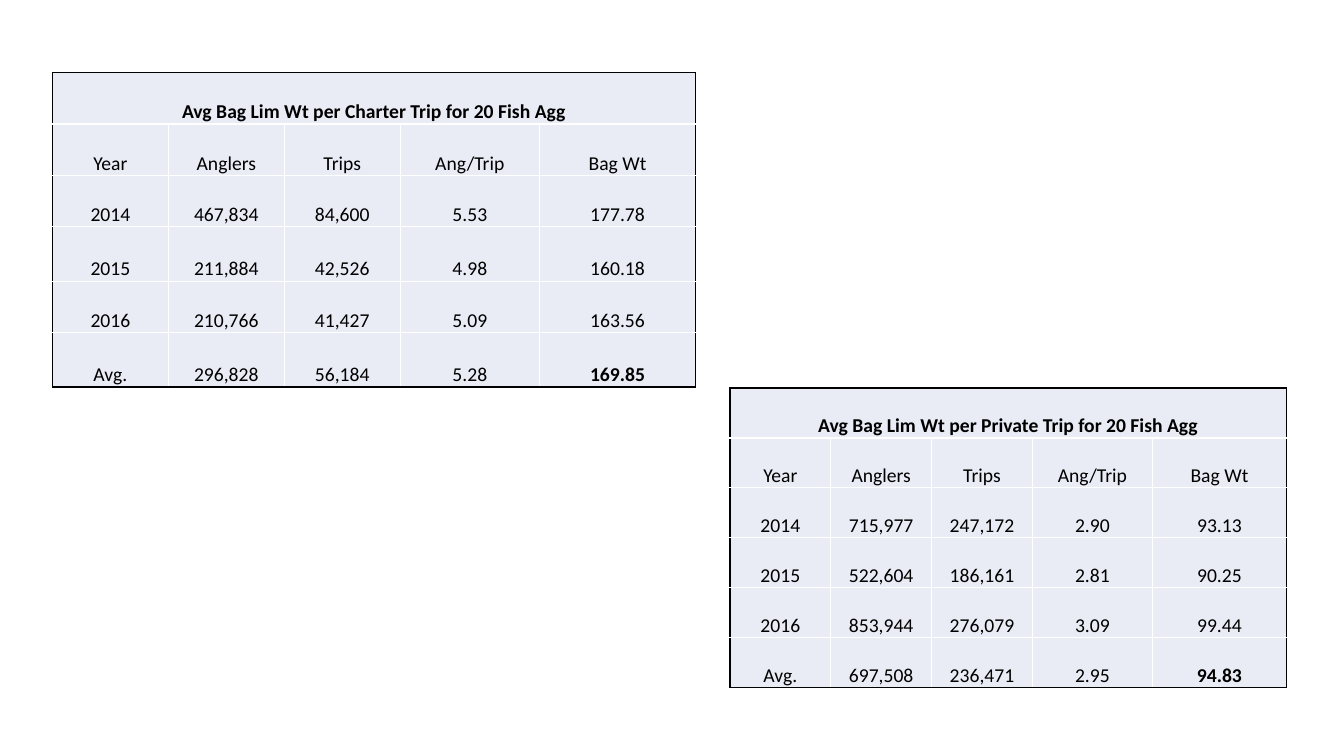
from dataclasses import dataclass

from pptx import Presentation
from pptx.dml.color import RGBColor
from pptx.enum import text
from pptx.oxml import xmlchemy
from pptx.oxml.ns import qn
from pptx.util import Inches, Pt
from lxml import etree


@dataclass(frozen=True)
class Theme:
    font: str = "Calibri"
    size: int = 14
    ink: str = "000000"
    grid: str = "FFFFFF"
    cell: str = "E9EBF5"
    line: int = 1


theme = Theme()


def add_border(cell, side, color):
    """Draw one side (L, R, T or B) of a cell; call before setting its fill."""
    line = etree.SubElement(cell._tc.get_or_add_tcPr(), qn(f"a:ln{side}"),
                            w=str(Pt(theme.line)))
    fill = etree.SubElement(line, qn("a:solidFill"))
    etree.SubElement(fill, qn("a:srgbClr"), val=color)


header = ["Year", "Anglers", "Trips", "Ang/Trip", "Bag Wt"]
tables = [
    {
        "title": "Avg Bag Lim Wt per Charter Trip for 20 Fish Agg",
        "corner": (0.52, 0.72),
        "widths": [1.15, 1.15, 1.15, 1.38, 1.55],
        "heights": [0.51, 0.51, 0.51, 0.54, 0.51, 0.54],
        "rows": [
            ["2014", "467,834", "84,600", "5.53", "177.78"],
            ["2015", "211,884", "42,526", "4.98", "160.18"],
            ["2016", "210,766", "41,427", "5.09", "163.56"],
            ["Avg.", "296,828", "56,184", "5.28", "169.85"],
        ],
    },
    {
        "title": "Avg Bag Lim Wt per Private Trip for 20 Fish Agg",
        "corner": (7.24, 3.85),
        "widths": [1, 1, 1, 1.19, 1.33],
        "heights": [0.495] * 6,
        "rows": [
            ["2014", "715,977", "247,172", "2.90", "93.13"],
            ["2015", "522,604", "186,161", "2.81", "90.25"],
            ["2016", "853,944", "276,079", "3.09", "99.44"],
            ["Avg.", "697,508", "236,471", "2.95", "94.83"],
        ],
    },
]

deck = Presentation()
deck.slide_width, deck.slide_height = Inches(13.33), Inches(7.5)
page = deck.slides.add_slide(deck.slide_layouts[6])

for data in tables:
    widths, heights = data["widths"], data["heights"]
    last_row, last_col = len(heights) - 1, len(widths) - 1
    left, top = data["corner"]
    table = page.shapes.add_table(
        len(heights), len(widths), Inches(left), Inches(top),
        Inches(sum(widths)), Inches(sum(heights))).table
    table.first_row = table.horz_banding = False
    for column, width in zip(table.columns, widths):
        column.width = Inches(width)
    for row, height in zip(table.rows, heights):
        row.height = Inches(height)
    table.cell(0, 0).merge(table.cell(0, last_col))

    title_row = [data["title"]] + [""] * last_col
    for r, values in enumerate([title_row, header] + data["rows"]):
        for c, value in enumerate(values):
            cell = table.cell(r, c)
            outer = {"L": r == 0 or c == 0, "R": r == 0 or c == last_col,
                     "T": r == 0, "B": r == last_row}
            for side, is_outer in outer.items():
                add_border(cell, side, theme.ink if is_outer else theme.grid)
            cell.fill.solid()
            cell.fill.fore_color.rgb = RGBColor.from_string(theme.cell)
            cell.vertical_anchor = text.MSO_ANCHOR.BOTTOM
            cell.margin_left = cell.margin_right = cell.margin_top = Inches(0.01)
            cell.margin_bottom = 0
            if not value:
                continue
            para = cell.text_frame.paragraphs[0]
            para.alignment = text.PP_ALIGN.CENTER
            span = para.add_run()
            span.text = value
            span.font.name = theme.font
            span.font.size = Pt(theme.size)
            span.font.bold = r == 0 or (r, c) == (last_row, last_col)
            span.font.color.rgb = RGBColor.from_string(theme.ink)

deck.save("out.pptx")
